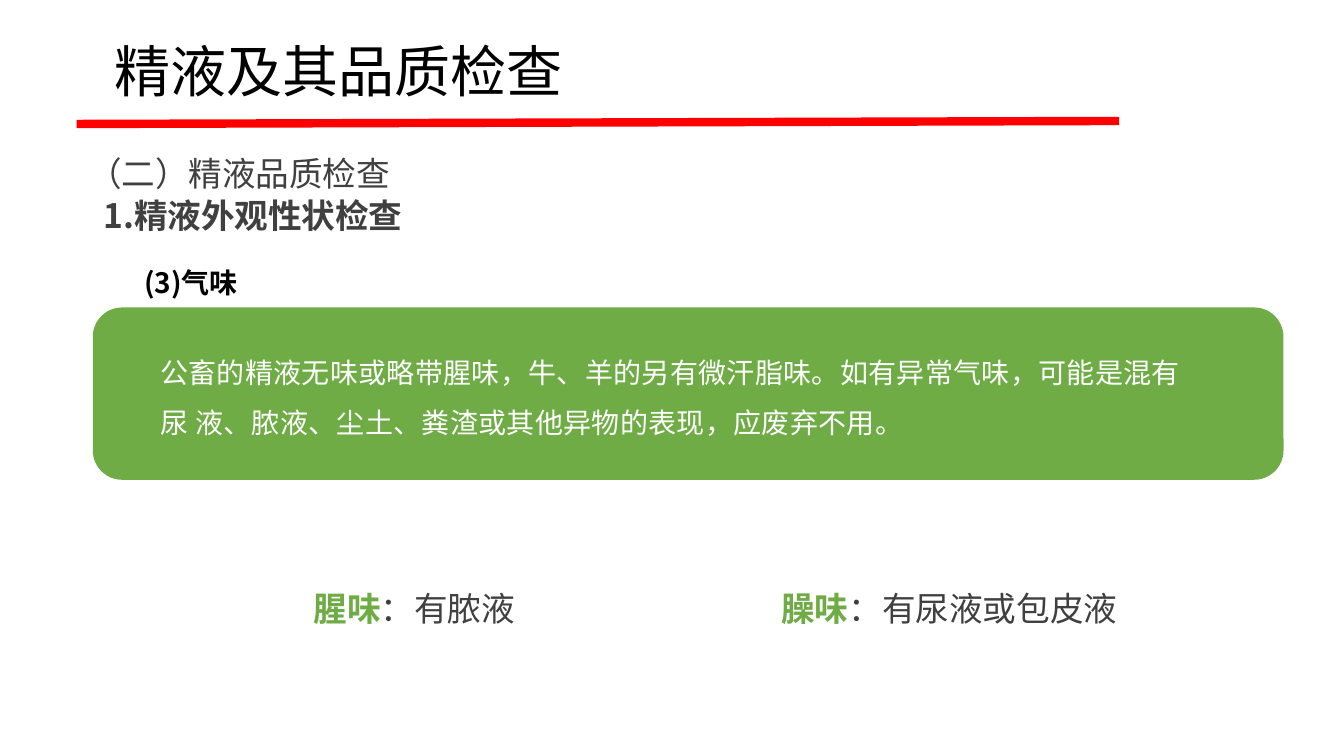
from dataclasses import dataclass

from lxml.etree import SubElement
from pptx import Presentation
from pptx.dml.color import RGBColor
from pptx.enum.shapes import MSO_CONNECTOR as Link, MSO_SHAPE as Shape
from pptx.enum.text import MSO_ANCHOR as Anchor
from pptx.oxml.ns import qn
from pptx.slide import Slide
from pptx.text.text import Font
from pptx.util import Pt

PX = 9144
FACE = "Noto Sans CJK SC"
BLACK = RGBColor(0x00, 0x00, 0x00)
GREY = RGBColor(0x40, 0x40, 0x40)
GREEN = RGBColor(0x6F, 0xAC, 0x46)
WHITE = RGBColor(0xFF, 0xFF, 0xFF)
RED = RGBColor(0xFF, 0x00, 0x00)


@dataclass(frozen=True)
class Span:
    text: str
    color: RGBColor
    bold: bool = False


@dataclass(frozen=True)
class Para:
    spans: tuple[Span, ...]
    size: int
    indent: int = 0
    before: float = 0
    lines: float = 1
    track: int = 0


@dataclass(frozen=True)
class Box:
    at: tuple[int, int, int, int]
    paras: tuple[Para, ...]
    inset: tuple[int, int, int, int] = (10, 5, 10, 5)
    anchor: Anchor = Anchor.TOP


def label(left: int, width: int, smell: str, cause: str) -> Box:
    spans = (Span(smell, GREEN, True), Span(cause, GREY))
    return Box((left, 582, width, 43), (Para(spans, 24),), (1, 1, 0, 0))


BOXES = (
    Box((92, 1, 1150, 145),
        (Para((Span("精液及其品质检查", BLACK),), 40, 12, lines=0.9),),
        anchor=Anchor.MIDDLE),
    Box((63, 147, 1062, 62), (
        Para((Span("（二）精液品质检查", GREY),), 24, 15, track=-10),
        Para((Span("1.精液外观性状检查", GREY, True),), 24, 30, 0.9, track=-10),
    )),
    Box((133, 242, 1062, 55),
        (Para((Span("(3)气味", BLACK, True),), 20, lines=1.5),)),
    Box((158, 335, 1035, 103),
        (Para((Span("公畜的精液无味或略带腥味，牛、羊的另有微汗脂味。如有异常气味，"
                    "可能是混有尿 液、脓液、尘土、粪渣或其他异物的表现，应废弃不用。",
                    WHITE),), 20, lines=1.5, track=20),),
        (1, 1, 10, 0)),
    label(310, 203, "腥味", "：有脓液"),
    label(774, 336, "臊味", "：有尿液或包皮液"),
)


def paint(font: Font, span: Span) -> None:
    font.bold = span.bold
    font.color.rgb = span.color


def draw_box(slide: Slide, box: Box) -> None:
    frame = slide.shapes.add_textbox(*(n * PX for n in box.at)).text_frame
    frame.word_wrap = True
    frame.vertical_anchor = box.anchor
    left, top, right, base = (n * PX for n in box.inset)
    frame.margin_left, frame.margin_top = left, top
    frame.margin_right, frame.margin_bottom = right, base
    for i, para in enumerate(box.paras):
        line = frame.add_paragraph() if i else frame.paragraphs[0]
        line.line_spacing = para.lines
        line.space_before = Pt(para.before)
        line._p.get_or_add_pPr().set("marL", str(para.indent * PX))
        font = line.font
        font.size = Pt(para.size)
        font.name = FACE
        if len(para.spans) == 1:
            paint(font, para.spans[0])
        SubElement(font._element, qn("a:ea")).set("typeface", FACE)
        font._element.set("spc", str(para.track))
        for span in para.spans:
            run = line.add_run()
            run.text = span.text
            if len(para.spans) > 1:
                paint(run.font, span)


def draw_rule(slide: Slide) -> None:
    rule = slide.shapes.add_connector(
        Link.STRAIGHT, *(n * PX for n in (76, 123, 1110, 120)))
    rule.line.color.rgb = RED
    rule.line.width = Pt(6)
    SubElement(rule._element.spPr, qn("a:effectLst"))


def draw_panel(slide: Slide) -> None:
    panel = slide.shapes.add_shape(
        Shape.ROUNDED_RECTANGLE, *(n * PX for n in (92, 305, 1181, 171)))
    panel.adjustments[0] = 0.17
    panel.shadow.inherit = False
    panel.fill.solid()
    panel.fill.fore_color.rgb = GREEN
    panel.line.fill.background()


def main() -> None:
    deck = Presentation()
    deck.slide_width, deck.slide_height = 1333 * PX, 750 * PX
    slide = deck.slides.add_slide(deck.slide_layouts[6])
    draw_rule(slide)
    draw_panel(slide)
    for box in BOXES:
        draw_box(slide, box)
    deck.save("out.pptx")


if __name__ == "__main__":
    main()
